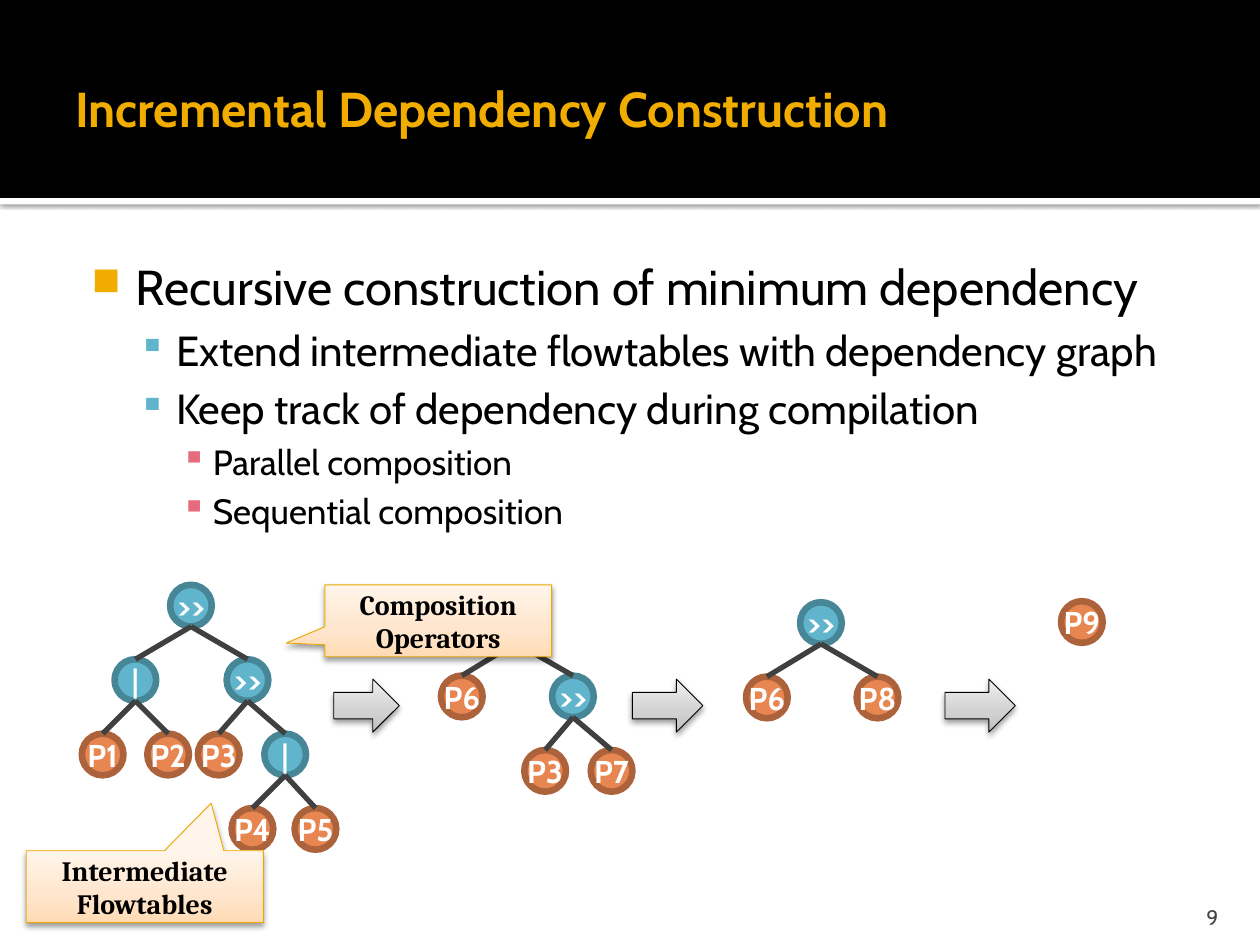
"""Build the slide on incremental dependency construction."""
from copy import deepcopy

from lxml import etree
from pptx import Presentation
from pptx import util as u
from pptx.dml.color import RGBColor
from pptx.enum import shapes, text
from pptx.oxml import ns

COLORS = {
    "black": "000000", "white": "FFFFFF", "gold": "F0AD00", "blue": "60B5CC",
    "blue_edge": "478697", "orange": "E88651", "orange_edge": "AC633C",
    "pink": "E66C7D", "branch": "404040", "number": "454545", "callout_edge": "EBA900",
}
GRAYS = ["BDBDBD", "D1D1D1", "EEEEEE"]
CREAMS = ["FFDBB5", "FFE5CB", "FFF5EB"]
SHAPE = shapes.MSO_SHAPE
ALIGN = text.PP_ALIGN
ANCHOR = text.MSO_ANCHOR


def write(box, lines, size, color="black", font="Cabin", bold=False, align=ALIGN.LEFT,
          anchor=ANCHOR.MIDDLE, insets=(0.25, 0.13, 0.25, 0.13), wrap=True):
    frame = box.text_frame
    frame.word_wrap = wrap
    frame.vertical_anchor = anchor
    frame.margin_left, frame.margin_top, frame.margin_right, frame.margin_bottom = map(u.Cm, insets)
    frame.text = lines
    for para in frame.paragraphs:
        para.alignment = align
        for span in para.runs:
            span.font.size = u.Pt(size)
            span.font.name = font
            span.font.bold = bold
            span.font.color.rgb = RGBColor.from_string(COLORS[color])


def cast_shadow(shape, opacity, blur, distance):
    shape.shadow.inherit = False
    effects = shape._element.spPr.find(ns.qn("a:effectLst"))
    shadow = etree.SubElement(effects, ns.qn("a:outerShdw"), blurRad=str(u.Pt(blur)),
                              dist=str(u.Pt(distance)), dir="5400000", rotWithShape="0")
    tint = etree.SubElement(shadow, ns.qn("a:srgbClr"), val=COLORS["black"])
    etree.SubElement(tint, ns.qn("a:alpha"), val=str(opacity * 1000))


deck = Presentation()
deck.slide_width, deck.slide_height = u.Cm(25.4), u.Cm(19.05)
page = deck.slides.add_slide(deck.slide_layouts[6])

for top, height, color in [(3.99, 0.13, "white"), (0, 3.99, "black")]:
    band = page.shapes.add_shape(SHAPE.RECTANGLE, 0, u.Cm(top), u.Cm(25.4), u.Cm(height))
    band.fill.solid()
    band.fill.fore_color.rgb = RGBColor.from_string(COLORS[color])
    band.line.fill.background()
    if color == "white":
        cast_shadow(band, 60, 2.5, 0.8)
    else:
        band.shadow.inherit = False

title = page.shapes.add_textbox(u.Cm(1.27), u.Cm(0.43), u.Cm(22.86), u.Cm(3.48))
write(title, "Incremental Dependency Construction", 28, color="gold", bold=True,
      insets=(0.25, 0.13, 0.13, 0.13))

LEVELS = [
    (28, 0, 1.22, -0.89, "■", "gold", 80),
    (24, 4.8, 2.03, -0.76, "▪", "blue", 90),
    (20, 4, 2.77, -0.64, "▪", "pink", 100),
]
POINTS = [
    (0, "Recursive construction of minimum dependency"),
    (1, "Extend intermediate flowtables with dependency graph"),
    (1, "Keep track of dependency during compilation"),
    (2, "Parallel composition"),
    (2, "Sequential composition"),
]
body = page.shapes.add_textbox(u.Cm(1.27), u.Cm(4.93), u.Cm(23.06), u.Cm(12.85))
write(body, "\n".join(point for _, point in POINTS), 28, anchor=ANCHOR.TOP,
      insets=(0.25, 0.25, 0.25, 0.13))
for para, (level, _) in zip(body.text_frame.paragraphs, POINTS):
    size, gap, margin, indent, mark, color, percent = LEVELS[level]
    para.level = level
    para.space_before = u.Pt(gap)
    para.runs[0].font.size = u.Pt(size)
    props = para._p.get_or_add_pPr()
    props.set("marL", str(u.Cm(margin)))
    props.set("indent", str(u.Cm(indent)))
    tint = etree.SubElement(props, ns.qn("a:buClr"))
    etree.SubElement(tint, ns.qn("a:srgbClr"), val=COLORS[color])
    etree.SubElement(props, ns.qn("a:buSzPct"), val=str(percent * 1000))
    etree.SubElement(props, ns.qn("a:buChar"), char=mark)

NODE, LEVEL_STEP = 0.84, 1.5
TREES = [
    (11.79, [(">>", 0, 3.43, None), ("|", 1, 2.31, 0), (">>", 1, 4.57, 0),
             ("P1", 2, 1.65, 1), ("P2", 2, 2.97, 1), ("P3", 2, 3.99, 2),
             ("|", 2, 5.33, 2), ("P4", 3, 4.67, 6), ("P5", 3, 5.94, 6)]),
    (12.12, [(">>", 0, 9.98, None), ("P6", 1, 8.89, 0), (">>", 1, 11.13, 0),
             ("P3", 2, 10.57, 2), ("P7", 2, 11.91, 2)]),
    (12.14, [(">>", 0, 16.13, None), ("P6", 1, 15.04, 0), ("P8", 1, 17.27, 0)]),
    (12.12, [("P9", 0, 21.39, None)]),
]
for tree_top, nodes in TREES:
    for label, level, left, parent in nodes:
        top = tree_top + level * LEVEL_STEP
        color = "orange" if label.startswith("P") else "blue"
        node = page.shapes.add_shape(SHAPE.OVAL, u.Cm(left), u.Cm(top), u.Cm(NODE), u.Cm(NODE))
        node.shadow.inherit = False
        node.fill.solid()
        node.fill.fore_color.rgb = RGBColor.from_string(COLORS[color])
        node.line.color.rgb = RGBColor.from_string(COLORS[color + "_edge"])
        node.line.width = u.Pt(3.78)
        write(node, label, 18, color="white", bold=True, align=ALIGN.CENTER,
              insets=(0, 0, 0, 0), wrap=False)
        if parent is None:
            continue
        _, parent_level, parent_left, _ = nodes[parent]
        branch = page.shapes.add_connector(
            shapes.MSO_CONNECTOR.STRAIGHT, u.Cm(left + NODE / 2), u.Cm(top),
            u.Cm(parent_left + NODE / 2), u.Cm(tree_top + parent_level * LEVEL_STEP + NODE))
        branch.line.color.rgb = RGBColor.from_string(COLORS["branch"])
        branch.line.width = u.Pt(3)
        etree.SubElement(branch._element.spPr, ns.qn("a:effectLst"))

ARROW, CALLOUT = SHAPE.RIGHT_ARROW, SHAPE.RECTANGULAR_CALLOUT
RAISED = [
    (ARROW, 6.73, 13.69, 1.32, 1.07, GRAYS, "black", None, None),
    (ARROW, 12.75, 13.69, 1.42, 1.07, GRAYS, "black", None, None),
    (ARROW, 19.05, 13.69, 1.42, 1.07, GRAYS, "black", None, None),
    (CALLOUT, 6.55, 11.79, 4.57, 1.45, CREAMS, "callout_edge", (-0.67, 0.31),
     "Composition Operators"),
    (CALLOUT, 0.53, 17.15, 4.78, 1.45, CREAMS, "callout_edge", (0.28, -1.16),
     "Intermediate\nFlowtables"),
]
for kind, left, top, width, height, tones, edge, tail, label in RAISED:
    raised = page.shapes.add_shape(kind, u.Cm(left), u.Cm(top), u.Cm(width), u.Cm(height))
    raised.fill.gradient()
    raised.fill.gradient_angle = 90
    stop_list = raised._element.spPr.find(".//" + ns.qn("a:gsLst"))
    stop_list.insert(1, deepcopy(stop_list[0]))
    for stop, position, tone in zip(raised.fill.gradient_stops, (0, 0.35, 1), tones):
        stop.position = position
        stop.color.rgb = RGBColor.from_string(tone)
    raised.line.color.rgb = RGBColor.from_string(COLORS[edge])
    raised.line.width = u.Pt(0.5)
    cast_shadow(raised, 38, 3.5, 2)
    if label:
        raised.adjustments[0], raised.adjustments[1] = tail
        write(raised, label, 16, font="Cambria", bold=True, align=ALIGN.CENTER)

number = page.shapes.add_textbox(u.Cm(22.78), u.Cm(17.98), u.Cm(2.03), u.Cm(0.76))
write(number, "9", 12, color="number", align=ALIGN.RIGHT, anchor=ANCHOR.BOTTOM,
      insets=(0.25, 0.13, 0.25, 0))

deck.save("out.pptx")
